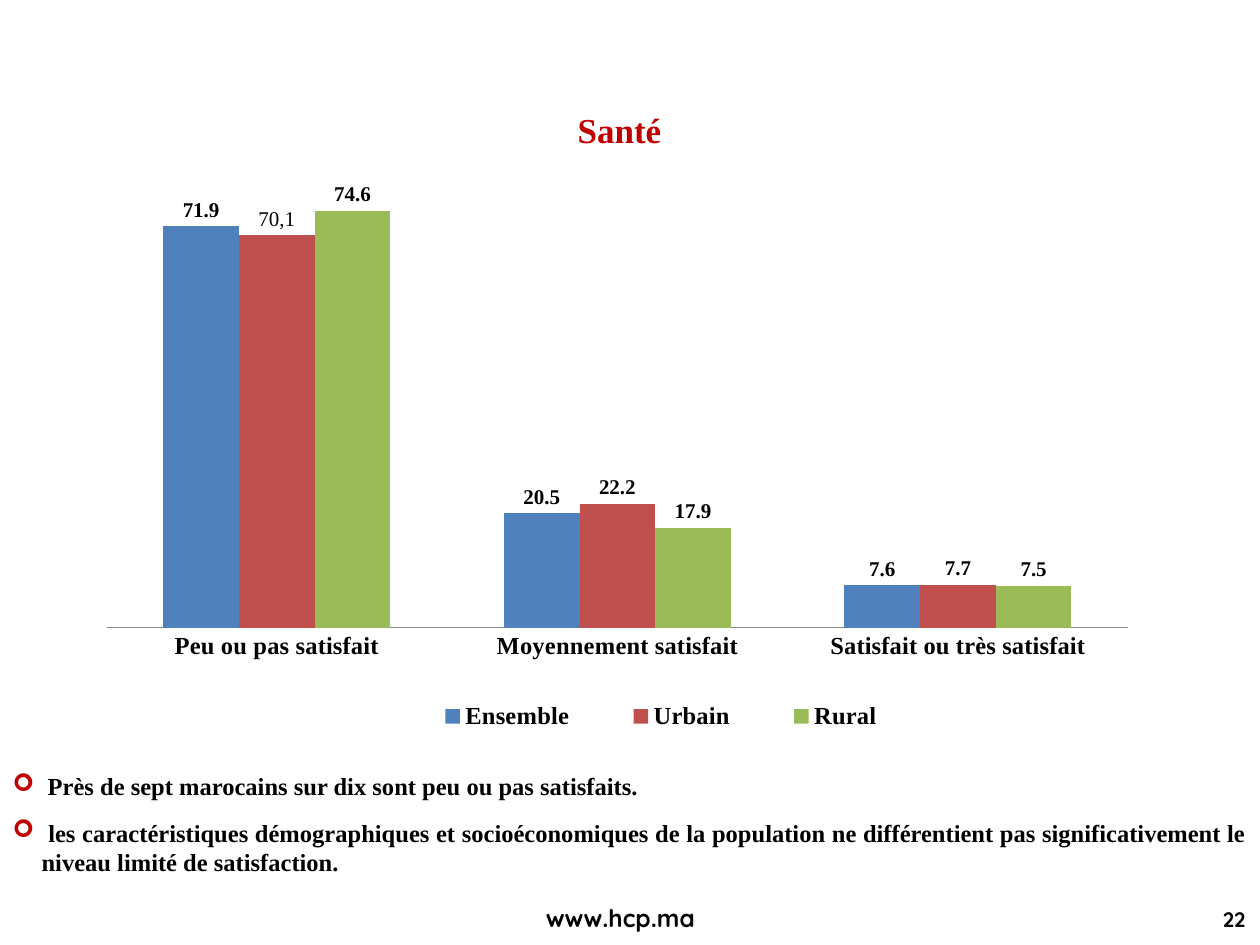
from lxml import etree
from pptx import Presentation
from pptx.chart.data import CategoryChartData
from pptx.dml.color import RGBColor
from pptx.enum.chart import XL_CHART_TYPE, XL_LABEL_POSITION, XL_LEGEND_POSITION, XL_TICK_MARK
from pptx.enum.text import MSO_ANCHOR, MSO_AUTO_SIZE, PP_ALIGN
from pptx.oxml import parse_xml
from pptx.oxml.ns import nsdecls, qn
from pptx.util import Pt

COLUMN = XL_CHART_TYPE.COLUMN_CLUSTERED
OUTSIDE = XL_LABEL_POSITION.OUTSIDE_END
BOTTOM = XL_LEGEND_POSITION.BOTTOM
NO_TICK = XL_TICK_MARK.NONE
LEFT, MID, RIGHT, JUST = PP_ALIGN.LEFT, PP_ALIGN.CENTER, PP_ALIGN.RIGHT, PP_ALIGN.JUSTIFY
TOP, CENTER = MSO_ANCHOR.TOP, MSO_ANCHOR.MIDDLE
PX = 914400 / 126

THEME = {
    "serif": "Times New Roman", "sans": "Quicksand",
    "ink": "000000", "red": "C00000", "axis": "868686",
    "bars": ["4F81BD", "C0504D", "9BBB59"],
    "title": 20, "body": 14, "label": 12,
}


def style(font, size, face="serif", color="ink", bold=True):
    font.name, font.size, font.bold = THEME[face], Pt(THEME[size]), bold
    font.color.rgb = RGBColor.from_string(THEME[color])


def write(shape, lines, box, size="body", align=LEFT, anchor=CENTER, bullet=None, gap=0, **look):
    shape.left, shape.top, shape.width, shape.height = [round(n * PX) for n in box]
    frame = shape.text_frame
    frame.word_wrap, frame.auto_size = True, MSO_AUTO_SIZE.NONE
    frame.vertical_anchor = anchor
    for i, line in enumerate(lines):
        para = frame.paragraphs[0] if i == 0 else frame.add_paragraph()
        para.alignment = align
        para.space_before = Pt(gap if i else 0)
        if bullet:
            props = para._p.get_or_add_pPr()
            props.set("marL", str(round(29 * PX)))
            props.set("indent", str(round(-29 * PX)))
            tint = etree.SubElement(props, qn("a:buClr"))
            etree.SubElement(tint, qn("a:srgbClr"), val=THEME["red"])
            etree.SubElement(props, qn("a:buFont"), typeface="Wingdings")
            etree.SubElement(props, qn("a:buChar"), char=bullet)
        run = para.add_run()
        run.text = line
        style(run.font, size, **look)


deck = Presentation()
deck.slide_width, deck.slide_height = round(1260 * PX), round(945 * PX)
slide = deck.slides.add_slide(deck.slide_layouts[1])
shapes = slide.shapes

# Footer and page number
write(shapes.add_textbox(0, 0, 0, 0), ["www.hcp.ma"], (481, 897, 279, 41),
      align=MID, anchor=TOP, face="sans")
write(shapes.add_textbox(0, 0, 0, 0), ["22"], (1066, 897, 192, 44),
      size="label", align=RIGHT, face="sans")

# Title
write(shapes.title, ["Santé"], (34, 106, 1171, 47), size="title", align=MID, color="red")

# Chart
data = CategoryChartData(number_format="0.0")
data.categories = ["Peu ou pas satisfait", "Moyennement satisfait", "Satisfait ou très satisfait"]
data.add_series("Ensemble", [71.9, 20.5, 7.6])
data.add_series("Urbain", [70.2, 22.2, 7.7])
data.add_series("Rural", [74.6, 17.9, 7.5])
area = [round(n * PX) for n in (74, 175, 1087, 573)]
chart = shapes.add_chart(COLUMN, *area, data).chart
chart.has_title = False
style(chart.font, "label")

# Axes
cats, vals = chart.category_axis, chart.value_axis
cats.major_tick_mark = cats.minor_tick_mark = NO_TICK
cats.format.line.color.rgb = RGBColor.from_string(THEME["axis"])
style(cats.tick_labels.font, "body")
vals.visible = vals.has_major_gridlines = False
vals.minimum_scale, vals.maximum_scale = 0, 80

# Columns and their labels
plot = chart.plots[0]
plot.gap_width, plot.overlap, plot.vary_by_categories = 150, 0, False
for bar, color in zip(plot.series, THEME["bars"]):
    bar.format.fill.solid()
    bar.format.fill.fore_color.rgb = RGBColor.from_string(color)
    labels = bar.data_labels
    labels.show_value, labels.position = True, OUTSIDE
    labels.number_format, labels.number_format_is_linked = "0.0", False
    style(labels.font, "label")
urban = plot.series[1].points[0].data_label
urban.position = OUTSIDE
run = urban.text_frame.paragraphs[0].add_run()
run.text = "70,1"
style(run.font, "label", bold=False)

# Legend
chart.has_legend = True
legend = chart.legend
legend.position, legend.include_in_layout = BOTTOM, False
style(legend.font, "body")

# Fixed places for the plot and the legend
space = chart._chartSpace
for tag, target, place in (("c:plotArea", "inner", (0.03, 0.01, 0.94, 0.78)),
                           ("c:legend", None, (0.29, 0.9, 0.5, 0.09))):
    part = space.find(".//" + qn(tag))
    for old in part.findall(qn("c:layout")):
        part.remove(old)
    inner = f'<c:layoutTarget val="{target}"/>' if target else ""
    modes = '<c:xMode val="edge"/><c:yMode val="edge"/>'
    sizes = "".join(f'<c:{k} val="{v}"/>' for k, v in zip("xywh", place))
    layout = parse_xml(f'<c:layout {nsdecls("c")}><c:manualLayout>{inner}{modes}{sizes}'
                       '</c:manualLayout></c:layout>')
    part.insert(0 if target else 1, layout)

# Findings
write(slide.placeholders[1], [
    " Près de sept marocains sur dix sont peu ou pas satisfaits.",
    " les caractéristiques démographiques et socioéconomiques de la population "
    "ne différentient pas significativement le niveau limité de satisfaction.",
], (0, 800, 1260, 47), align=JUST, bullet="➢", gap=10)

deck.save("out.pptx")
